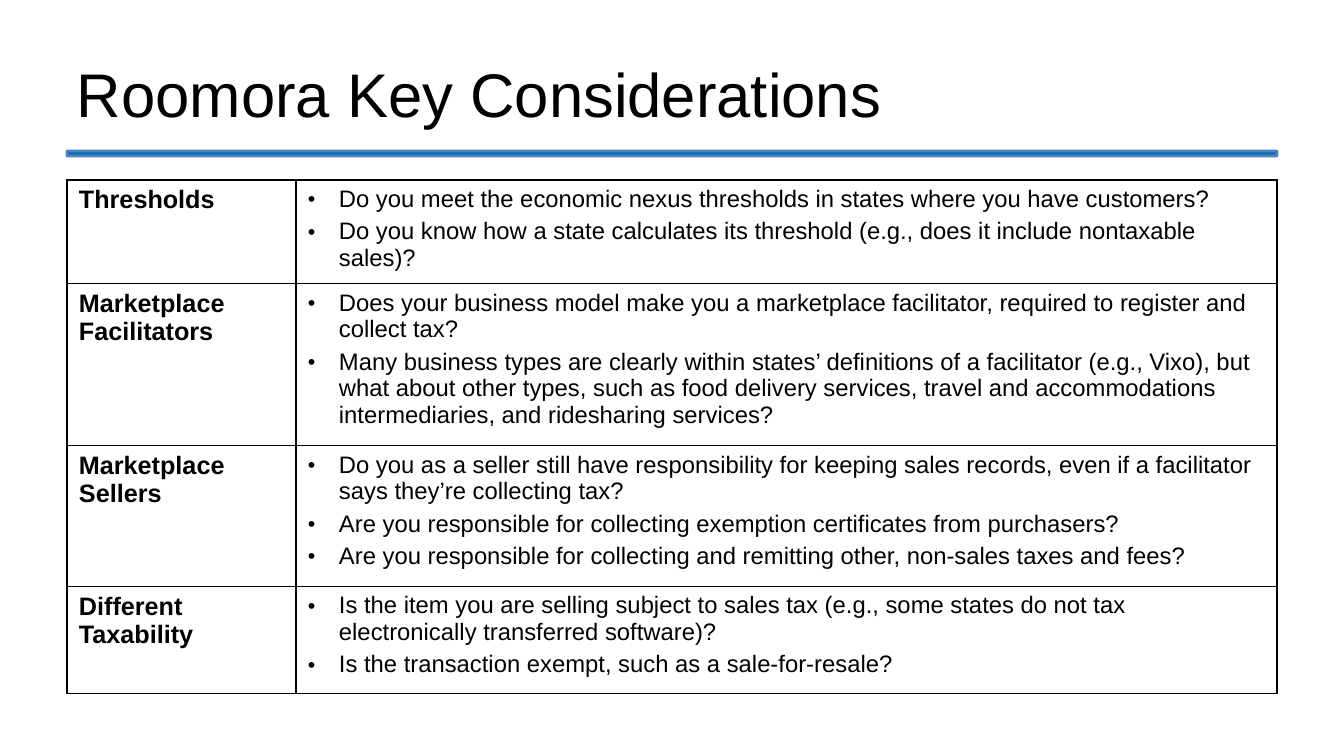
from lxml import etree
from pptx import Presentation
from pptx.dml.color import RGBColor
from pptx.enum.shapes import MSO_SHAPE
from pptx.enum.text import MSO_ANCHOR, PP_ALIGN
from pptx.oxml.ns import qn
from pptx.util import Emu, Pt

ROUNDED = MSO_SHAPE.ROUNDED_RECTANGLE
MIDDLE, TOP = MSO_ANCHOR.MIDDLE, MSO_ANCHOR.TOP
LEFT = PP_ALIGN.LEFT
BLANK_LAYOUT = 6
SCALE = 914400 / 100.8

PAGE_LEFT, PAGE_WIDTH = 67, 1210
COLUMN_WIDTHS = [229, 981]
ROW_HEIGHTS = [98, 162, 141, 107]
CONSIDERATIONS = [
    ("Thresholds", [
        "Do you meet the economic nexus thresholds in states where you have customers?",
        "Do you know how a state calculates its threshold (e.g., does it include nontaxable sales)?",
    ]),
    ("Marketplace Facilitators", [
        "Does your business model make you a marketplace facilitator, required to register and collect tax?",
        "Many business types are clearly within states’ definitions of a facilitator (e.g., Vixo), but what "
        "about other types, such as food delivery services, travel and accommodations intermediaries, and "
        "ridesharing services?",
    ]),
    ("Marketplace Sellers", [
        "Do you as a seller still have responsibility for keeping sales records, even if a facilitator says "
        "they’re collecting tax?",
        "Are you responsible for collecting exemption certificates from purchasers?",
        "Are you responsible for collecting and remitting other, non-sales taxes and fees?",
    ]),
    ("Different Taxability", [
        "Is the item you are selling subject to sales tax (e.g., some states do not tax electronically "
        "transferred software)?",
        "Is the transaction exempt, such as a sale-for-resale?",
    ]),
]


def px(length):
    return Emu(round(length * SCALE))


def color(value):
    return RGBColor.from_string(value)


class SlideBuilder:
    font = "Arial"
    ink = "000000"
    accent = "0070C0"
    accent_edge = "4F81BD"

    def __init__(self, page):
        self.page = page

    def style(self, para, size, bold=False):
        para.alignment = LEFT
        for span in para.runs:
            span.font.name = self.font
            span.font.size = Pt(size)
            span.font.bold = bold
            span.font.color.rgb = color(self.ink)

    def title(self, text, left, top, width, height):
        box = self.page.shapes.add_textbox(px(left), px(top), px(width), px(height))
        frame = box.text_frame
        frame.word_wrap = True
        frame.vertical_anchor = MIDDLE
        frame.text = text
        self.style(frame.paragraphs[0], 44)

    def rule(self, left, top, width, height):
        bar = self.page.shapes.add_shape(ROUNDED, px(left), px(top), px(width), px(height))
        bar.shadow.inherit = False
        bar.fill.solid()
        bar.fill.fore_color.rgb = color(self.accent)
        bar.line.color.rgb = color(self.accent_edge)
        bar.line.width = Pt(2)

    def bullet(self, para):
        properties = para._p.get_or_add_pPr()
        properties.set("marL", str(px(31)))
        properties.set("indent", str(-px(31)))
        etree.SubElement(properties, qn("a:buSzPct")).set("val", "90000")
        etree.SubElement(properties, qn("a:buFont")).set("typeface", self.font)
        etree.SubElement(properties, qn("a:buChar")).set("char", "•")

    def borders(self, cell):
        properties = cell._tc.get_or_add_tcPr()
        for position, side in enumerate(("lnL", "lnR", "lnT", "lnB")):
            edge = etree.Element(qn(f"a:{side}"), w=str(Pt(1)))
            fill = etree.SubElement(edge, qn("a:solidFill"))
            etree.SubElement(fill, qn("a:srgbClr")).set("val", self.ink)
            properties.insert(position, edge)

    def cell(self, cell, lines, size, bold=False, bulleted=False):
        cell.margin_left = cell.margin_right = px(12)
        cell.margin_top = cell.margin_bottom = px(6)
        cell.vertical_anchor = TOP
        cell.fill.background()
        self.borders(cell)
        frame = cell.text_frame
        frame.text = "\n".join(lines)
        for para in frame.paragraphs:
            if bulleted:
                self.bullet(para)
            para.space_after = Pt(4)
            self.style(para, size, bold)

    def table(self, entries, left, top, widths, heights):
        frame = self.page.shapes.add_table(
            len(heights), len(widths), px(left), px(top), px(sum(widths)), px(sum(heights)))
        table = frame.table
        table.first_row = False
        table.horz_banding = False
        for column, width in zip(table.columns, widths):
            column.width = px(width)
        for row, height, (topic, questions) in zip(table.rows, heights, entries):
            row.height = px(height)
            self.cell(row.cells[0], [topic], 18, bold=True)
            self.cell(row.cells[1], questions, 17, bulleted=True)


def main():
    deck = Presentation()
    deck.slide_width, deck.slide_height = px(1344), px(756)
    page = deck.slides.add_slide(deck.slide_layouts[BLANK_LAYOUT])
    builder = SlideBuilder(page)
    builder.rule(PAGE_LEFT, 151, PAGE_WIDTH, 5)
    builder.title("Roomora Key Considerations", PAGE_LEFT, 30, PAGE_WIDTH, 126)
    builder.table(CONSIDERATIONS, PAGE_LEFT, 180, COLUMN_WIDTHS, ROW_HEIGHTS)
    deck.save("out.pptx")


if __name__ == "__main__":
    main()
